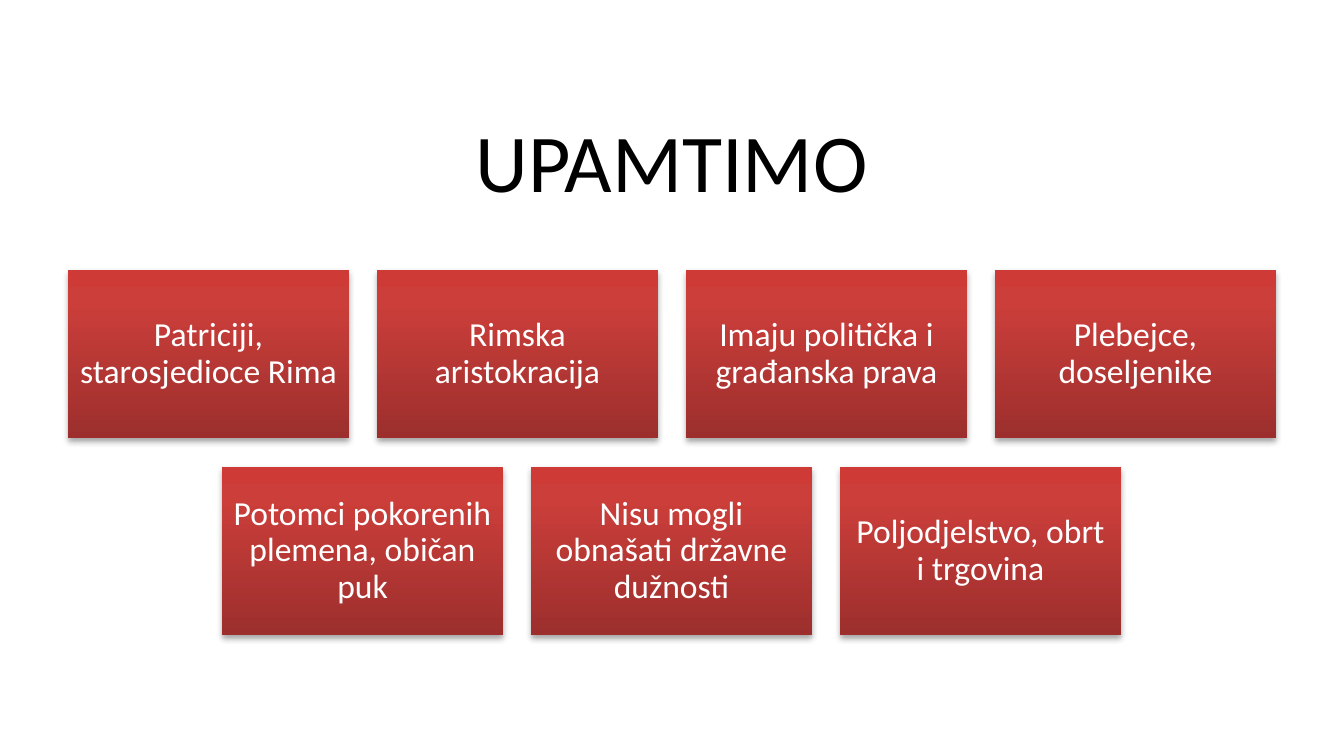
from dataclasses import dataclass

from pptx import Presentation, oxml, util as u
from pptx.dml.color import RGBColor
from pptx.enum import shapes, text
from pptx.oxml.ns import nsdecls, qn

PX = 914400 / 134.4  # EMU in one px
WIDE, HIGH = 1344, 756


@dataclass(frozen=True)
class Theme:
    font: str = "Calibri"
    ink: str = "000000"
    pale: str = "FFFFFF"
    reds: tuple = ((0, "9C2F2D"), (80, "CB3E3A"), (100, "CE3B37"))
    head: int = 44
    body: int = 18


def emu(px):
    return u.Emu(round(px * PX))


class Deck:
    def __init__(self, theme):
        self.theme = theme
        self.prs = Presentation()
        self.prs.slide_width, self.prs.slide_height = emu(WIDE), emu(HIGH)
        self.slide = self.prs.slides.add_slide(self.prs.slide_layouts[6])

    def label(self, shape, words, size, color, inset):
        frame = shape.text_frame
        form = dict.fromkeys(
            ("margin_left", "margin_top", "margin_right", "margin_bottom"), emu(inset))
        form.update(word_wrap=True, vertical_anchor=text.MSO_ANCHOR.MIDDLE)
        para = frame.paragraphs[0]
        para.text = words
        font = para.runs[0].font
        font.color.rgb = RGBColor.from_string(color)
        for part, values in (
            (frame, form),
            (para, {"alignment": text.PP_ALIGN.CENTER, "line_spacing": 0.9}),
            (font, {"name": self.theme.font, "size": u.Pt(size)}),
        ):
            for name, value in values.items():
                setattr(part, name, value)

    def title(self, words, *rect):
        box = self.slide.shapes.add_textbox(*map(emu, rect))
        self.label(box, words, self.theme.head, self.theme.ink, 9)

    def card(self, words, *rect):
        card = self.slide.shapes.add_shape(
            shapes.MSO_SHAPE.RECTANGLE, *map(emu, rect))
        props = card.element.spPr
        # Gradient from dark at the bottom to bright at the top
        stops = "".join(
            f'<a:gs pos="{pos * 1000}"><a:srgbClr val="{color}"/></a:gs>'
            for pos, color in self.theme.reds)
        props.append(oxml.parse_xml(
            f'<a:gradFill {nsdecls("a")} rotWithShape="1"><a:gsLst>{stops}</a:gsLst>'
            '<a:lin ang="16200000" scaled="0"/></a:gradFill>'))
        card.line.fill.background()
        # Soft shadow straight below
        card.shadow.inherit = False
        props.find(qn("a:effectLst")).append(oxml.parse_xml(
            f'<a:outerShdw {nsdecls("a")} blurRad="40000" dist="23000" dir="5400000"'
            f' rotWithShape="0"><a:srgbClr val="{self.theme.ink}">'
            '<a:alpha val="35000"/></a:srgbClr></a:outerShdw>'))
        self.label(card, words, self.theme.body, self.theme.pale, 9)


ROWS = (
    ("Patriciji, starosjedioce Rima", "Rimska aristokracija",
     "Imaju politička i građanska prava", "Plebejce, doseljenike"),
    ("Potomci pokorenih plemena, običan puk",
     "Nisu mogli obnašati državne dužnosti", "Poljodjelstvo, obrt i trgovina"),
)
CARD_W, CARD_H, GAP, TOP = 281, 168, 28, 270


def main():
    deck = Deck(Theme())
    deck.title("UPAMTIMO", 67, 113, 1210, 105)

    # Rows of cards, each centred on the slide
    for row, names in enumerate(ROWS):
        span = len(names) * (CARD_W + GAP) - GAP
        left = (WIDE - span) // 2
        top = TOP + row * (CARD_H + GAP + 1)
        for col, words in enumerate(names):
            deck.card(words, left + col * (CARD_W + GAP), top, CARD_W, CARD_H)

    deck.prs.save("out.pptx")


if __name__ == "__main__":
    main()
